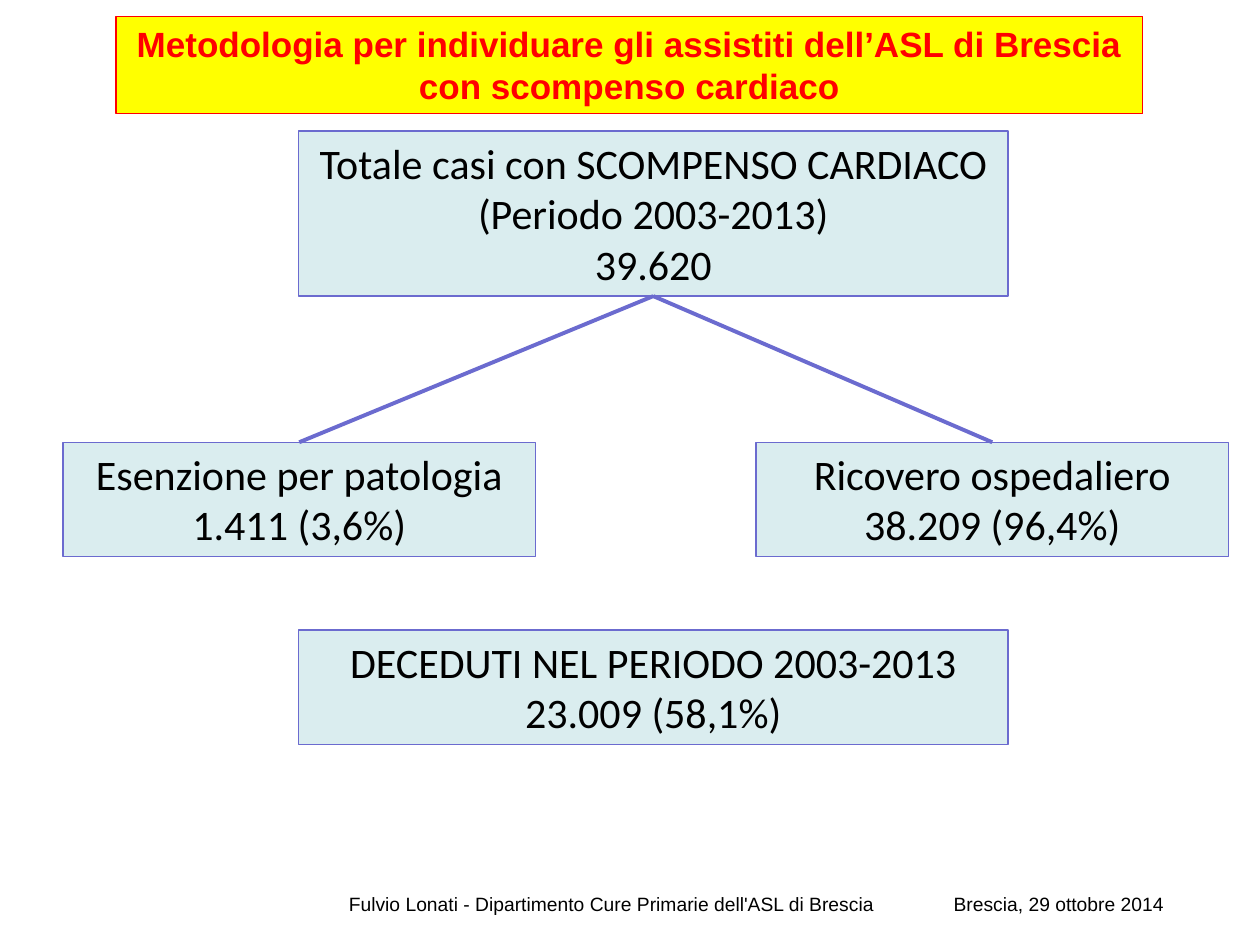
import pptx
import pptx.util
import pptx.dml.color
import pptx.enum.shapes
import pptx.enum.text
import pptx.oxml.ns
import lxml.etree

Inches = pptx.util.Inches
Pt = pptx.util.Pt
align = pptx.enum.text.PP_ALIGN
anchor = pptx.enum.text.MSO_ANCHOR
qn = pptx.oxml.ns.qn


def color(code):
    return pptx.dml.color.RGBColor.from_string(code)


def write(frame, text, font, size, ink, bold, side):
    frame.text = text
    for para in frame.paragraphs:
        para.alignment = side
        for run in para.runs:
            run.font.name = font
            run.font.size = Pt(size)
            run.font.bold = bold
            run.font.color.rgb = color(ink)


deck = pptx.Presentation()
deck.slide_width = Inches(10)
deck.slide_height = Inches(7.5)
slide = deck.slides.add_slide(deck.slide_layouts[6])
shapes = slide.shapes

blue = "6B6BCF"
pale = (("DAEDEF", blue), ("Calibri", 24, "000000", False))
title = (("FFFF00", "FF0000"), ("Arial", 20, "FF0000", True))
boxes = [
    (2.37, 1.04, 5.63, 1.31, pale,
     "Totale casi con SCOMPENSO CARDIACO\n(Periodo 2003-2013)\n39.620"),
    (0.5, 3.51, 3.75, 0.91, pale, "Esenzione per patologia\n1.411 (3,6%)"),
    (6, 3.51, 3.75, 0.91, pale, "Ricovero ospedaliero\n38.209 (96,4%)"),
    (2.37, 5, 5.63, 0.91, pale, "DECEDUTI NEL PERIODO 2003-2013\n23.009 (58,1%)"),
    (0.92, 0.13, 8.15, 0.77, title,
     "Metodologia per individuare gli assistiti dell’ASL di Brescia\ncon scompenso cardiaco"),
]
made = []
for left, top, width, height, (paint, style), text in boxes:
    box = shapes.add_shape(pptx.enum.shapes.MSO_SHAPE.RECTANGLE,
                           Inches(left), Inches(top), Inches(width), Inches(height))
    box.shadow.inherit = False
    box.fill.solid()
    box.fill.fore_color.rgb = color(paint[0])
    box.line.color.rgb = color(paint[1])
    box.line.width = Pt(0.75)
    frame = box.text_frame
    frame.word_wrap = style is not title[1]
    frame.vertical_anchor = anchor.TOP if frame.word_wrap else anchor.MIDDLE
    write(frame, text, *style, align.CENTER)
    made.append(box)

total, *causes = made[:3]
for cause in causes:
    line = shapes.add_connector(pptx.enum.shapes.MSO_CONNECTOR.STRAIGHT, 0, 0, 0, 0)
    line.begin_connect(total, 2)
    line.end_connect(cause, 0)
    line.line.color.rgb = color(blue)
    line.line.width = Pt(2.25)
    lxml.etree.SubElement(line._element.spPr, qn("a:effectLst"))

foot = shapes.add_textbox(Inches(2.67), Inches(7.03), Inches(6.83), Inches(0.32)).text_frame
foot.word_wrap = True
write(foot, "Fulvio Lonati - Dipartimento Cure Primarie dell'ASL di Brescia\tBrescia, 29 ottobre 2014",
      "Arial", 11, "000000", False, align.LEFT)
tabs = lxml.etree.SubElement(foot.paragraphs[0]._p.get_or_add_pPr(), qn("a:tabLst"))
lxml.etree.SubElement(tabs, qn("a:tab"), pos=str(Inches(4.8)), algn="l")

deck.save("out.pptx")
